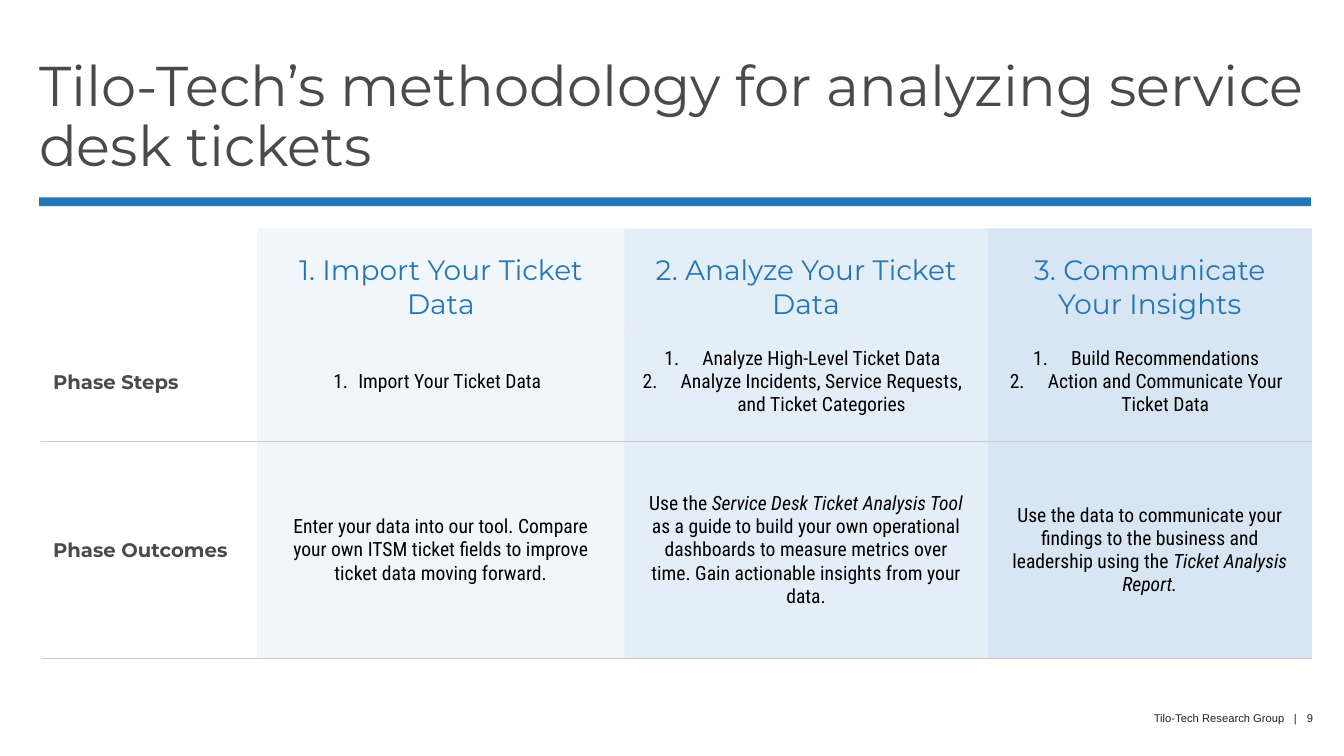
from dataclasses import dataclass
from typing import Any

from lxml.etree import SubElement
from pptx import Presentation
from pptx.dml.color import RGBColor
from pptx.enum.shapes import MSO_SHAPE
from pptx.enum.text import MSO_ANCHOR, MSO_AUTO_SIZE, PP_ALIGN
from pptx.oxml.ns import qn
from pptx.util import Emu, Pt

EMU_PER_PX = 9080
COLORS = {
    "title": "4A4A4A", "accent": "2576B7", "tint": "7CADD4",
    "rule": "C9C9C9", "body": "000000", "footer": "242424",
}
MARGINS = ("margin_left", "margin_top", "margin_right", "margin_bottom")


@dataclass(frozen=True)
class TextStyle:
    font: str
    size: int
    color: str
    bold: bool = False
    align: Any = PP_ALIGN.CENTER


@dataclass(frozen=True)
class PhaseRow:
    height: int
    margins: tuple[int, int, int, int]
    label_margins: tuple[int, int, int, int]
    style: TextStyle
    label: str
    # One entry per phase; each holds paragraphs, and "*" switches italics
    phases: tuple[tuple[str, ...], ...]
    indents: tuple[int, ...] = (0, 0, 0)
    top_rule: bool = False
    bottom_rule: bool = True


TITLE = TextStyle("Montserrat", 40, "title", align=PP_ALIGN.LEFT)
HEADING = TextStyle("Montserrat", 20, "accent")
LABEL = TextStyle("Montserrat", 14, "title", True, PP_ALIGN.LEFT)
BODY = TextStyle("Roboto Condensed", 14, "body")
FOOTER = TextStyle("Arial", 8, "footer", align=PP_ALIGN.LEFT)

COLUMN_WIDTHS = (216, 367, 363, 324)
TINT_STEP = 10  # each phase is this many percent stronger than the last
ROWS = (
    PhaseRow(106, (12, 24, 12, 12), (12, 24, 12, 12), HEADING, "", (
        ("1. Import Your Ticket Data",),
        ("2. Analyze Your Ticket Data",),
        ("3. Communicate Your Insights",),
    ), bottom_rule=False),
    PhaseRow(107, (5, 4, 12, 16), (12, 4, 0, 16), BODY, "Phase Steps", (
        ("Import Your Ticket Data",),
        ("Analyze High-Level Ticket Data",
         "Analyze Incidents, Service Requests, and Ticket Categories"),
        ("Build Recommendations", "Action and Communicate Your Ticket Data"),
    ), indents=(25, 38, 38)),
    PhaseRow(217, (20, 20, 20, 20), (12, 12, 12, 12), BODY, "Phase Outcomes", (
        ("Enter your data into our tool. Compare your own ITSM ticket fields "
         "to improve ticket data moving forward.",),
        ("Use the *Service Desk Ticket Analysis Tool *as a guide to build your own "
         "operational dashboards to measure metrics over time. Gain actionable "
         "insights from your data.",),
        ("Use the data to communicate your findings to the business and "
         "leadership using the *Ticket Analysis Report.",),
    ), top_rule=True),
)


def px(length: int) -> Emu:
    return Emu(length * EMU_PER_PX)


def rgb(name: str) -> RGBColor:
    return RGBColor.from_string(COLORS[name])


def apply(target: Any, values: dict[str, Any]) -> None:
    for name, value in values.items():
        setattr(target, name, value)


def place(shape: Any, left: int, top: int, width: int, height: int) -> None:
    apply(shape, {"left": px(left), "top": px(top),
                  "width": px(width), "height": px(height)})


def set_margins(target: Any, margins: tuple[int, int, int, int]) -> None:
    apply(target, dict(zip(MARGINS, map(px, margins))))


def write(frame: Any, lines: tuple[str, ...], style: TextStyle, indent: int = 0) -> None:
    for index, line in enumerate(lines):
        paragraph = frame.add_paragraph() if index else frame.paragraphs[0]
        paragraph.alignment = style.align
        if indent:
            props = paragraph._p.get_or_add_pPr()
            props.set("marL", str(px(indent)))
            props.set("indent", str(-px(indent)))
            SubElement(props, qn("a:buFont"), typeface="+mj-lt")
            SubElement(props, qn("a:buAutoNum"), type="arabicPeriod")
        for part, text in enumerate(line.split("*")):
            run = paragraph.add_run()
            run.text = text
            apply(run.font, {"name": style.font, "size": Pt(style.size),
                             "bold": style.bold, "italic": part % 2 == 1})
            run.font.color.rgb = rgb(style.color)


def set_borders(cell: Any, top: bool, bottom: bool) -> None:
    props = cell._tc.get_or_add_tcPr()
    for side, visible in {"L": False, "R": False, "T": top, "B": bottom}.items():
        line = SubElement(props, qn(f"a:ln{side}"), w=str(Pt(1)))
        if visible:
            fill = SubElement(line, qn("a:solidFill"))
            SubElement(fill, qn("a:srgbClr"), val=COLORS["rule"])
        else:
            SubElement(line, qn("a:noFill"))


def set_tint(cell: Any, percent: int) -> None:
    if not percent:
        cell.fill.background()
        return
    cell.fill.solid()
    cell.fill.fore_color.rgb = rgb("tint")
    color = cell._tc.tcPr.find(f"{qn('a:solidFill')}/{qn('a:srgbClr')}")
    SubElement(color, qn("a:alpha"), val=str(percent * 1000))


def add_title(slide: Any) -> None:
    title = slide.shapes.title
    place(title, 39, 58, 1271, 125)
    frame = title.text_frame
    set_margins(frame, (0, 0, 0, 0))
    apply(frame, {"word_wrap": True, "auto_size": MSO_AUTO_SIZE.NONE,
                  "vertical_anchor": MSO_ANCHOR.TOP})
    write(frame, ("Tilo-Tech’s methodology for analyzing service desk tickets",), TITLE)
    frame.paragraphs[0].line_spacing = 0.9

    # Bar under the title
    bar = slide.shapes.add_shape(MSO_SHAPE.RECTANGLE, px(39), px(197), px(1271), px(9))
    bar.shadow.inherit = False
    bar.fill.solid()
    bar.fill.fore_color.rgb = rgb("accent")
    bar.line.fill.background()


def add_phase_table(slide: Any) -> None:
    table = slide.shapes.add_table(
        len(ROWS), len(COLUMN_WIDTHS), px(41), px(228),
        px(sum(COLUMN_WIDTHS)), px(sum(row.height for row in ROWS))).table
    apply(table, {"first_row": False, "horz_banding": False})
    for column, width in zip(table.columns, COLUMN_WIDTHS):
        column.width = px(width)
    for row_index, row in enumerate(ROWS):
        table.rows[row_index].height = px(row.height)
        contents = ((row.label,) if row.label else (), *row.phases)
        for column_index, lines in enumerate(contents):
            is_label = column_index == 0
            cell = table.cell(row_index, column_index)
            cell.vertical_anchor = MSO_ANCHOR.MIDDLE
            set_margins(cell, row.label_margins if is_label else row.margins)
            set_borders(cell, row.top_rule, row.bottom_rule)
            set_tint(cell, column_index * TINT_STEP)
            write(cell.text_frame, lines, LABEL if is_label else row.style,
                  0 if is_label else row.indents[column_index - 1])


def add_footer(slide: Any) -> None:
    frame = slide.shapes.add_textbox(px(1153), px(710), px(170), px(14)).text_frame
    frame.word_wrap = True
    set_margins(frame, (0, 0, 0, 0))
    tabs = SubElement(frame.paragraphs[0]._p.get_or_add_pPr(), qn("a:tabLst"))
    for stop in (140, 153):
        SubElement(tabs, qn("a:tab"), pos=str(px(stop)), algn="l")
    write(frame, ("Tilo-Tech Research Group\t|\t9",), FOOTER)


def main() -> None:
    deck = Presentation()
    apply(deck, {"slide_width": px(1343), "slide_height": px(755)})
    slide = deck.slides.add_slide(deck.slide_layouts[5])
    add_title(slide)
    add_phase_table(slide)
    add_footer(slide)
    deck.save("out.pptx")


if __name__ == "__main__":
    main()
